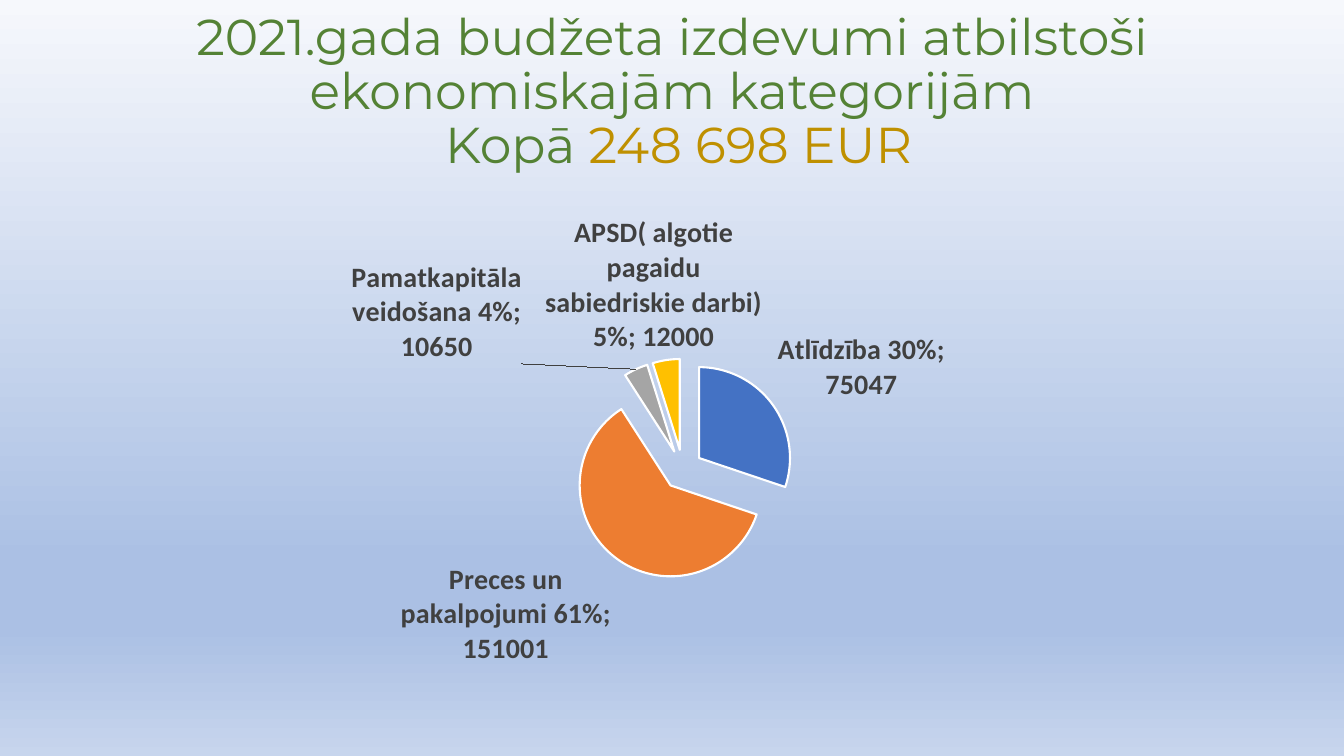
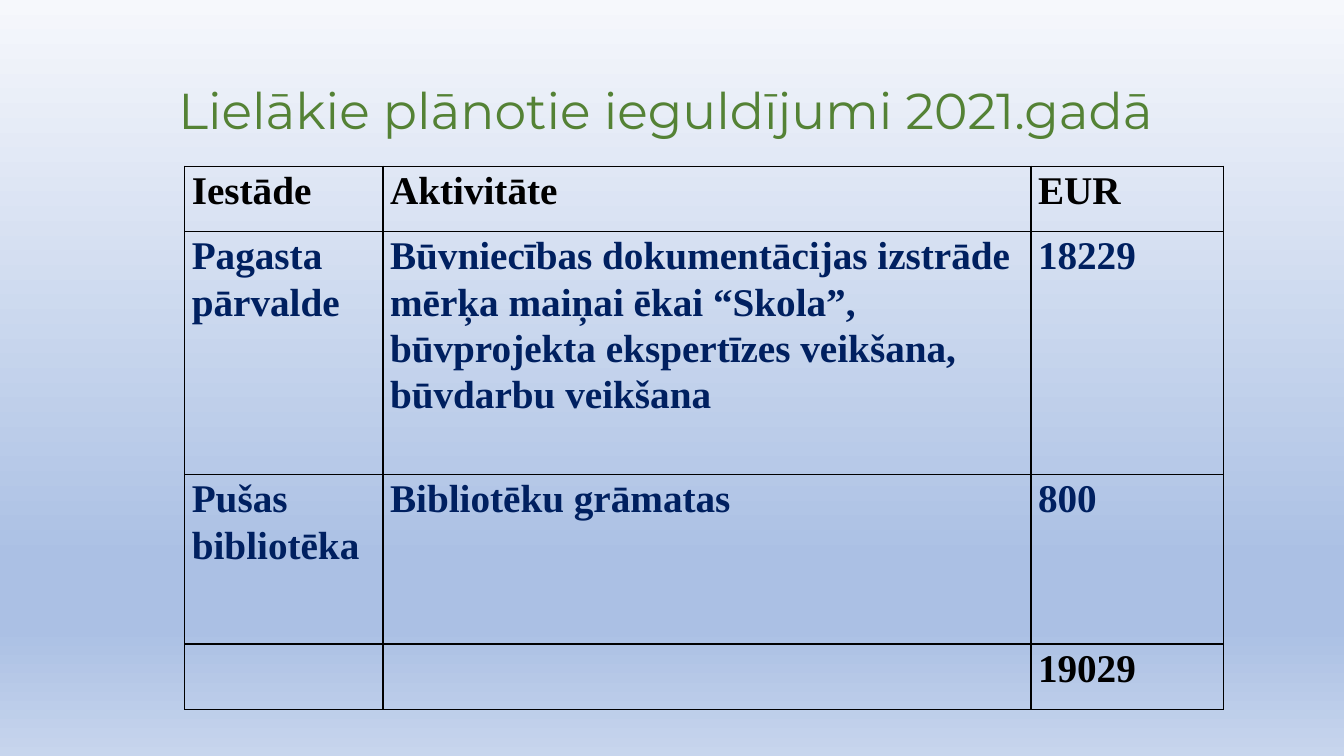
import pptx
import pptx.util
import pptx.chart.data
import pptx.dml.color
import pptx.enum.chart
import pptx.enum.text
import pptx.oxml.ns
import lxml.etree

SLIDE_WIDTH = pptx.util.Inches(13.33)
SLIDE_HEIGHT = pptx.util.Inches(7.5)
MARGIN = 6.88
CONTENT_WIDTH = 86.25

GREEN = "548235"
GOLD = "BF9000"
NAVY = "002060"
BLACK = "000000"
WHITE = "FFFFFF"
LABEL_GREY = "404040"
BACKGROUND_STOPS = [(0, "F6F8FC"), (74, "ABC0E4"), (83, "ABC0E4"), (100, "C7D5ED")]

EXPENSES = [
    ("Atlīdzība 30%", 75047, "4472C4"),
    ("Preces un pakalpojumi 61%", 151001, "ED7D31"),
    ("Pamatkapitāla veidošana 4%", 10650, "A5A5A5"),
    ("APSD( algotie pagaidu sabiedriskie darbi) 5%", 12000, "FFC000"),
]

COLUMN_SHARES = [14.75, 48.21, 14.33]
ROW_SHARES = [8.67, 32.13, 22.4, 8.67]
INVESTMENTS = [
    ("Iestāde", "Aktivitāte", "EUR"),
    (
        "Pagasta pārvalde",
        "Būvniecības dokumentācijas izstrāde mērķa maiņai ēkai “Skola”, "
        "būvprojekta ekspertīzes veikšana, būvdarbu veikšana",
        "18229",
    ),
    ("Pušas bibliotēka", "Bibliotēku grāmatas", "800"),
    ("", "", "19029"),
]


def color(hex_string):
    return pptx.dml.color.RGBColor.from_string(hex_string)


def across(percent):
    return round(SLIDE_WIDTH * percent / 100)


def down(percent):
    return round(SLIDE_HEIGHT * percent / 100)


def frame(left, top, width, height):
    return across(left), down(top), across(width), down(height)


def add_element(parent, tag, **attributes):
    return lxml.etree.SubElement(parent, pptx.oxml.ns.qn(tag), attributes)


def set_background(master):
    fill = master.background.fill
    fill.gradient()
    fill.gradient_angle = 270
    stop_list = next(master.element.iter(pptx.oxml.ns.qn("a:gsLst")))
    for stop in list(stop_list):
        stop_list.remove(stop)
    for position, hex_string in BACKGROUND_STOPS:
        stop = add_element(stop_list, "a:gs", pos=str(position * 1000))
        add_element(stop, "a:srgbClr", val=hex_string)


def add_slide(deck):
    return deck.slides.add_slide(deck.slide_layouts[6])


def add_run(para, text, font_name, size, hex_string, bold=False):
    span = para.add_run()
    span.text = text
    span.font.name = font_name
    span.font.size = pptx.util.Pt(size)
    span.font.bold = bold
    span.font.color.rgb = color(hex_string)


def add_title(slide, top, height, lines):
    box = slide.shapes.add_textbox(*frame(MARGIN, top, CONTENT_WIDTH, height))
    box.text_frame.word_wrap = True
    box.text_frame.vertical_anchor = pptx.enum.text.MSO_ANCHOR.MIDDLE
    para = box.text_frame.paragraphs[0]
    para.alignment = pptx.enum.text.PP_ALIGN.CENTER
    para.line_spacing = 0.9
    for index, line in enumerate(lines):
        if index:
            para.add_line_break()
        for text, hex_string in line:
            add_run(para, text, "Montserrat", 36, hex_string)


def add_pie(slide, top, height, slices):
    data = pptx.chart.data.CategoryChartData()
    data.categories = [name for name, value, hex_string in slices]
    data.add_series("Series 1", [value for name, value, hex_string in slices])
    chart = slide.shapes.add_chart(
        pptx.enum.chart.XL_CHART_TYPE.PIE,
        *frame(MARGIN, top, CONTENT_WIDTH, height),
        data,
    ).chart
    chart.has_title = False
    chart.has_legend = False
    chart.font.name = "Calibri"
    chart.font.size = pptx.util.Pt(10)
    plot = chart.plots[0]
    plot.vary_by_categories = True
    series = plot.series[0]
    for index, (name, value, hex_string) in enumerate(slices):
        look = series.points[index].format
        look.fill.solid()
        look.fill.fore_color.rgb = color(hex_string)
        look.line.color.rgb = color(WHITE)
        look.line.width = pptx.util.Pt(1.5)
    explode(series, 22)
    style_labels(series.data_labels)


def explode(series, percent):
    element = series._element
    explosion = add_element(element, "c:explosion", val=str(percent))
    element.find(pptx.oxml.ns.qn("c:dPt")).addprevious(explosion)


def style_labels(labels):
    labels.show_value = True
    labels.show_category_name = True
    labels.position = pptx.enum.chart.XL_LABEL_POSITION.BEST_FIT
    labels.font.name = "Calibri"
    labels.font.size = pptx.util.Pt(20)
    labels.font.bold = True
    labels.font.color.rgb = color(LABEL_GREY)


def add_borders(cell):
    properties = cell._tc.get_or_add_tcPr()
    for index, side in enumerate(("a:lnL", "a:lnR", "a:lnT", "a:lnB")):
        line = add_element(properties, side, w=str(pptx.util.Pt(1)))
        fill = add_element(line, "a:solidFill")
        add_element(fill, "a:srgbClr", val=BLACK)
        properties.insert(index, line)


def fill_cell(cell, text, hex_string, alignment):
    cell.fill.background()
    add_borders(cell)
    cell.margin_left = cell.margin_right = pptx.util.Inches(0.07)
    cell.margin_top = cell.margin_bottom = 0
    if text:
        para = cell.text_frame.paragraphs[0]
        para.alignment = alignment
        para.line_spacing = 1.07
        para.space_after = pptx.util.Pt(8)
        add_run(para, text, "Times New Roman", 28, hex_string, bold=True)


def add_grid(slide, left, top, rows):
    table = slide.shapes.add_table(
        len(rows),
        len(COLUMN_SHARES),
        *frame(left, top, sum(COLUMN_SHARES), sum(ROW_SHARES)),
    ).table
    table.first_row = False
    table.horz_banding = False
    for column, share in zip(table.columns, COLUMN_SHARES):
        column.width = across(share)
    for row, share in zip(table.rows, ROW_SHARES):
        row.height = down(share)
    align = pptx.enum.text.PP_ALIGN
    for row_index, texts in enumerate(rows):
        is_edge = row_index in (0, len(rows) - 1)
        for column_index, text in enumerate(texts):
            is_activity = column_index == 1 and not is_edge
            fill_cell(
                table.cell(row_index, column_index),
                text,
                BLACK if is_edge else NAVY,
                align.LEFT if is_activity else align.JUSTIFY,
            )


def main():
    deck = pptx.Presentation()
    deck.slide_width = SLIDE_WIDTH
    deck.slide_height = SLIDE_HEIGHT
    set_background(deck.slide_master)

    expenses = add_slide(deck)
    add_title(expenses, 0, 24.67, [
        [("2021.gada budžeta izdevumi atbilstoši ekonomiskajām kategorijām", GREEN)],
        [(" Kopā ", GREEN), ("248 698 EUR", GOLD)],
    ])
    add_pie(expenses, 26.67, 63.47, EXPENSES)

    investments = add_slide(deck)
    add_title(investments, 5.33, 19.33, [
        [("Lielākie plānotie ieguldījumi 2021.gadā ", GREEN)],
    ])
    add_grid(investments, 13.75, 22, INVESTMENTS)

    deck.save("out.pptx")


if __name__ == "__main__":
    main()
